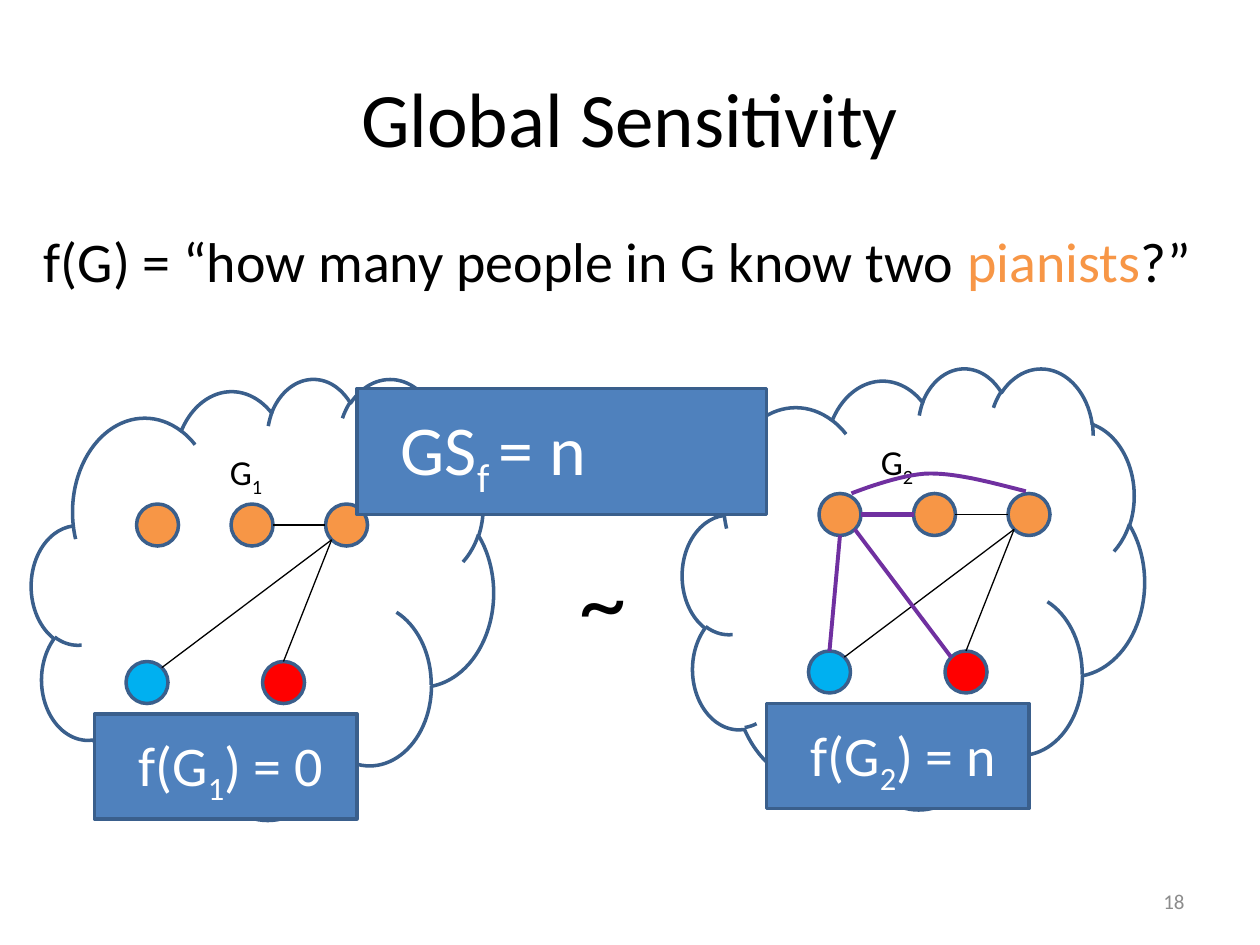
"""Builds the Global Sensitivity slide: two neighbouring graphs and their pianist counts."""
import math

import pptx
import pptx.dml.color
import pptx.enum.shapes
import pptx.enum.text
import pptx.oxml
import pptx.util

COLS, ROWS = 120, 90
COLORS = {"ink": "000000", "paper": "FFFFFF", "orange": "F79646", "red": "FF0000",
          "sky": "00B0F0", "box": "4F81BD", "outline": "3A5F8C", "purple": "7030A0",
          "gray": "8C8C8C"}
SHAPES = pptx.enum.shapes.MSO_SHAPE
ALIGN = pptx.enum.text.PP_ALIGN
ANCHOR = pptx.enum.text.MSO_ANCHOR

CLOUDS = [((65, 35, 44, 42), "2"), ((3, 36, 44, 42), "1")]
BOXES = [
    ((9, 68, 25, 10), (12, 69, 20.4, 7.7), 32, [("f(G", ""), ("1", "sub"), (") = 0", "")], False),
    ((73, 67, 25, 10), (76, 68, 20.5, 7.7), 32, [("f(G", ""), ("2", "sub"), (") = n", "")], False),
    ((34, 37, 39, 12), (37, 38, 36, 17.4), 40, [("GS", ""), ("f ", "sub"), ("= n", "")], True),
]
TEXTS = [
    ((6, 3.6, 108, 15), 44, "ink", [("Global Sensitivity", "")], ALIGN.CENTER, ANCHOR.MIDDLE, True),
    ((3, 21, 113, 59.4), 32, "ink",
     [("f(G) = “how many people in G know two ", ""), ("pianists", "orange"), ("?”", "")],
     ALIGN.LEFT, ANCHOR.TOP, True),
    ((86, 83.4, 28, 4.8), 12, "gray", [("18", "")], ALIGN.RIGHT, ANCHOR.MIDDLE, True),
    ((54, 50.9, 7, 12.1), 54, "ink", [("~", "")], ALIGN.LEFT, ANCHOR.TOP, False),
]
NODE = 4
NODES = {"first": (13, 48, "orange"), "second": (22, 48, "orange"), "third": (31, 48, "orange"),
         "sky": (12, 63, "sky"), "red": (25, 63, "red")}
GRAPH_SHIFTS = [(0, 0), (65, -1)]
ANGLES = {"E": 0, "SE": 45, "S": 90, "SW": 135, "W": 180, "NW": 225, "N": 270, "NE": 315}
SHARED_EDGES = [("second", "E", "third", "W"), ("red", "N", "third", "SW"),
                ("sky", "NE", "third", "SW")]
ADDED_EDGES = [("second", "W", "first", "E", 2.5), ("first", "S", "sky", "N", 2.25),
               ("first", "SE", "red", "NW", 2.25)]
ARC = [[(97.7, 46.8), (94.6, 46), (91.3, 45.1), (88.6, 45.1)],
       [(88.6, 45.1), (85.8, 45.1), (81.1, 47), (81.1, 47)]]
ARC_STEPS = 16

deck = pptx.Presentation()
deck.slide_width, deck.slide_height = pptx.util.Inches(10), pptx.util.Inches(7.5)
slide = deck.slides.add_slide(deck.slide_layouts[6])


def place(*grid):
    """Turns alternating columns and rows into slide lengths."""
    units = (deck.slide_width / COLS, deck.slide_height / ROWS)
    return [round(value * units[i % 2]) for i, value in enumerate(grid)]


def rgb(name):
    return pptx.dml.color.RGBColor.from_string(COLORS[name])


def write(holder, runs, size, color, align=ALIGN.LEFT, anchor=ANCHOR.TOP, wrap=True):
    frame = holder.text_frame
    for key, value in {"word_wrap": wrap, "vertical_anchor": anchor}.items():
        setattr(frame, key, value)
    line = frame.paragraphs[0]
    line.alignment = align
    for words, style in runs:
        run = line.add_run()
        run.text = words
        for key, value in {"name": "Calibri", "size": pptx.util.Pt(size)}.items():
            setattr(run.font, key, value)
        run.font.color.rgb = rgb(style if style in COLORS else color)
        if style == "sub":
            run._r.get_or_add_rPr().set("baseline", "-25000")


def stroke(item, color, width):
    item.line.color.rgb = rgb(color)
    item.line.width = pptx.util.Pt(width)


def draw(kind, grid, fill):
    shape = slide.shapes.add_shape(kind, *place(*grid))
    shape.shadow.inherit = False
    shape.fill.solid()
    shape.fill.fore_color.rgb = rgb(fill)
    stroke(shape, "outline", 2)
    return shape


def rim(node, side, shift):
    """Finds the point of a node's circle that faces the given side."""
    angle = math.radians(ANGLES[side])
    column, row, _ = NODES[node]
    return (column + shift[0] + NODE / 2 * (1 + math.cos(angle)),
            row + shift[1] + NODE / 2 * (1 + math.sin(angle)))


def connect(start, start_side, end, end_side, shift, color, width):
    ends = rim(start, start_side, shift) + rim(end, end_side, shift)
    edge = slide.shapes.add_connector(pptx.enum.shapes.MSO_CONNECTOR.STRAIGHT, *place(*ends))
    stroke(edge, color, width)
    edge._element.spPr.append(pptx.oxml.parse_xml(
        '<a:effectLst xmlns:a="http://schemas.openxmlformats.org/drawingml/2006/main"/>'))


def bezier(points, t):
    weights = [math.comb(3, i) * t ** i * (1 - t) ** (3 - i) for i in range(4)]
    return place(*(sum(w * p[axis] for w, p in zip(weights, points)) for axis in (0, 1)))


for grid, index in CLOUDS:
    write(draw(SHAPES.CLOUD, grid, "paper"), [("G", ""), (index, "sub")], 20, "ink", ALIGN.CENTER)

for grid, size, color, runs, align, anchor, wrap in TEXTS:
    write(slide.shapes.add_textbox(*place(*grid)), runs, size, color, align, anchor, wrap)

for dx, dy in GRAPH_SHIFTS:
    for column, row, fill in NODES.values():
        draw(SHAPES.OVAL, (column + dx, row + dy, NODE, NODE), fill)

for grid, label_grid, size, runs, wrap in BOXES:
    draw(SHAPES.RECTANGLE, grid, "box")
    write(slide.shapes.add_textbox(*place(*label_grid)), runs, size, "paper", wrap=wrap)

for shift in GRAPH_SHIFTS:
    for ends in SHARED_EDGES:
        connect(*ends, shift, "ink", 0.75)
for *ends, width in ADDED_EDGES:
    connect(*ends, GRAPH_SHIFTS[1], "purple", width)

start, *rest = [bezier(part, step / ARC_STEPS) for part in ARC for step in range(ARC_STEPS + 1)]
builder = slide.shapes.build_freeform(*start)
builder.add_line_segments(rest, close=False)
arc = builder.convert_to_shape()
arc.shadow.inherit = False
arc.fill.background()
stroke(arc, "purple", 2.25)

deck.save("out.pptx")
